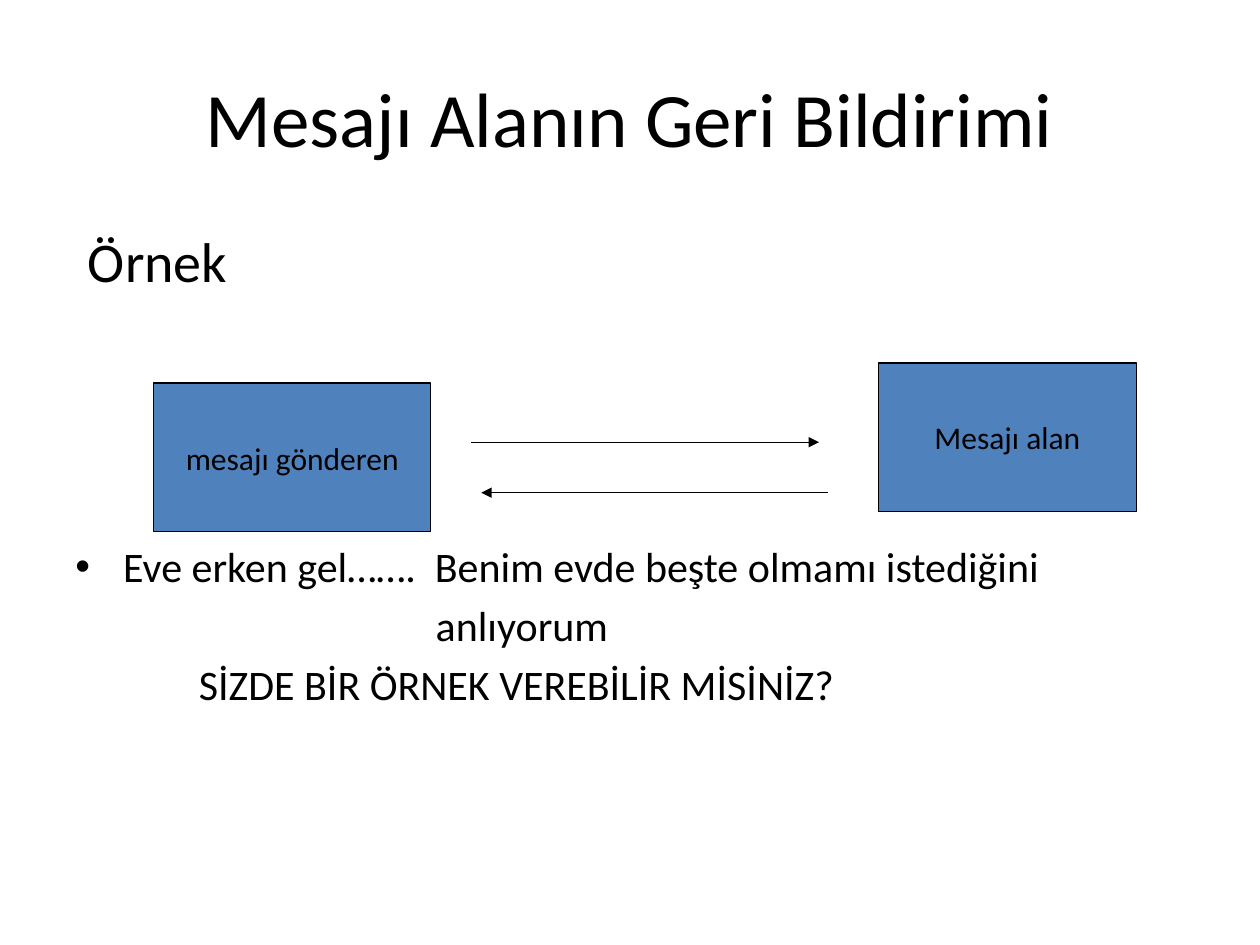
from lxml import etree
from pptx import Presentation
from pptx.dml.color import RGBColor
from pptx.enum import shapes, text
from pptx.oxml.ns import qn
from pptx.util import Inches, Pt

FONT = "Calibri"
COLORS = {"ink": "000000", "box": "4F81BD"}

TITLE = "Mesajı Alanın Geri Bildirimi"
# text, size, left margin, first-line indent (inches), space before (points), bullet
BODY = [
    ("Örnek", 32, 0.1, 0, 0, None),
    ("Eve erken gel…….  Benim evde beşte olmamı istediğini", 24, 0.38, -0.38, 141, "•"),
    ("anlıyorum", 24, 2.86, 0, 4.8, None),
    ("SİZDE BİR ÖRNEK VEREBİLİR MİSİNİZ?", 24, 0.98, 0, 4.8, None),
]
# text, left, top, width, height
BOXES = [
    ("mesajı gönderen", 1.22, 3.04, 2.2, 1.18),
    ("Mesajı alan", 6.97, 2.88, 2.05, 1.18),
]
# start x, end x, y
ARROWS = [(3.74, 6.5, 3.51), (6.57, 3.82, 3.91)]


def color(name):
    return RGBColor.from_string(COLORS[name])


def add_run(paragraph, content, size):
    run = paragraph.add_run()
    run.text = content
    run.font.name = FONT
    run.font.size = Pt(size)
    run.font.color.rgb = color("ink")


def style_line(line):
    line.color.rgb = color("ink")
    line.width = Pt(0.75)


def add_text_frame(slide, left, top, width, height):
    frame = slide.shapes.add_textbox(*map(Inches, (left, top, width, height))).text_frame
    frame.word_wrap = True
    return frame


def add_title(slide):
    frame = add_text_frame(slide, 0.5, 0.3, 9, 1.25)
    frame.vertical_anchor = text.MSO_ANCHOR.MIDDLE
    paragraph = frame.paragraphs[0]
    paragraph.alignment = text.PP_ALIGN.CENTER
    add_run(paragraph, TITLE, 44)


def add_body(slide):
    frame = add_text_frame(slide, 0.5, 1.75, 9, 4.95)
    for index, (content, size, margin, indent, before, bullet) in enumerate(BODY):
        paragraph = frame.add_paragraph() if index else frame.paragraphs[0]
        paragraph.space_before = Pt(before)
        properties = paragraph._p.get_or_add_pPr()
        properties.set("marL", str(Inches(margin)))
        properties.set("indent", str(Inches(indent)))
        if bullet:
            etree.SubElement(properties, qn("a:buFont"), typeface="Arial")
            etree.SubElement(properties, qn("a:buChar"), char=bullet)
        add_run(paragraph, content, size)


def add_box(slide, content, *bounds):
    shape = slide.shapes.add_shape(shapes.MSO_SHAPE.RECTANGLE, *map(Inches, bounds))
    shape.shadow.inherit = False
    shape.fill.solid()
    shape.fill.fore_color.rgb = color("box")
    style_line(shape.line)
    frame = shape.text_frame
    frame.word_wrap = False
    frame.vertical_anchor = text.MSO_ANCHOR.MIDDLE
    paragraph = frame.paragraphs[0]
    paragraph.alignment = text.PP_ALIGN.CENTER
    add_run(paragraph, content, 18)


def add_arrow(slide, start, end, y):
    connector = slide.shapes.add_connector(
        shapes.MSO_CONNECTOR.STRAIGHT, *map(Inches, (start, y, end, y)))
    style_line(connector.line)
    etree.SubElement(connector.line._get_or_add_ln(), qn("a:tailEnd"), type="triangle")
    etree.SubElement(connector._element.spPr, qn("a:effectLst"))


def main():
    presentation = Presentation()
    presentation.slide_width, presentation.slide_height = Inches(10), Inches(7.5)
    slide = presentation.slides.add_slide(presentation.slide_layouts[6])
    add_title(slide)
    add_body(slide)
    for box in BOXES:
        add_box(slide, *box)
    for arrow in ARROWS:
        add_arrow(slide, *arrow)
    presentation.save("out.pptx")


if __name__ == "__main__":
    main()
